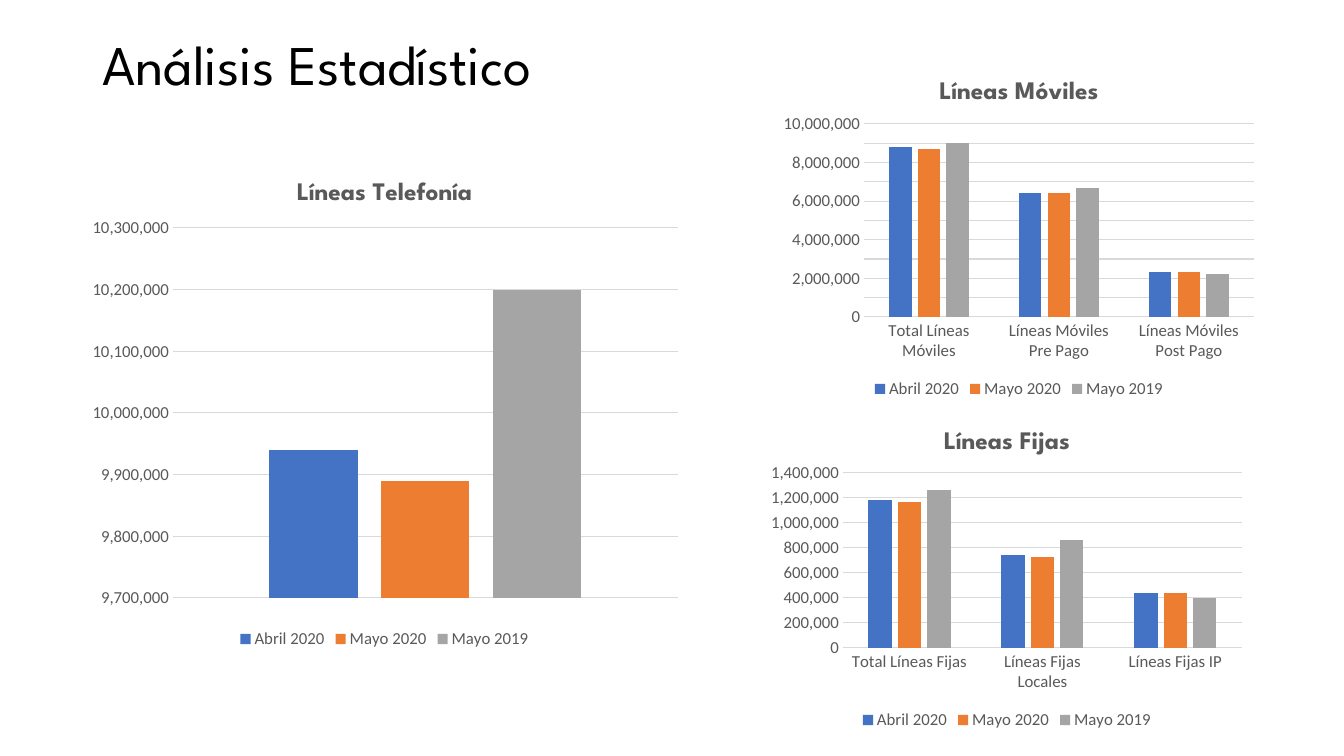
"""Build the slide of telephone line statistics with three column charts."""
from dataclasses import dataclass
from typing import Optional

from lxml.etree import SubElement
from pptx import Presentation
from pptx.chart.data import CategoryChartData
from pptx.dml.color import RGBColor
from pptx.enum.chart import XL_CHART_TYPE, XL_LEGEND_POSITION, XL_TICK_MARK
from pptx.enum.text import MSO_ANCHOR, MSO_AUTO_SIZE, PP_ALIGN
from pptx.oxml.ns import qn
from pptx.util import Emu, Pt

SCALE = 914400 / 100.8
TITLE_FONT = "League Spartan"
BODY_FONT = "Calibri"
GRAY = "595959"
GRID = "D9D9D9"
PERIODS = {"Abril 2020": "4472C4", "Mayo 2020": "ED7D31", "Mayo 2019": "A5A5A5"}


@dataclass(frozen=True)
class Box:
    left: int
    top: int
    width: int
    height: int


@dataclass(frozen=True)
class ColumnChart:
    title: str
    frame: Box
    plot: Box
    categories: list[str]
    values: list[list[int]]
    minimum: int
    maximum: int
    step: int
    show_categories: bool = True


CHARTS = [
    ColumnChart(
        "Líneas Móviles", Box(774, 62, 490, 341), Box(864, 124, 390, 193),
        ["Total Líneas Móviles", "Líneas Móviles Pre Pago", "Líneas Móviles Post Pago"],
        [[8800000, 6400000, 2300000],
         [8700000, 6400000, 2300000],
         [9000000, 6700000, 2200000]],
        0, 10000000, 1000000,
    ),
    ColumnChart(
        "Líneas Telefonía", Box(79, 160, 611, 493), Box(173, 228, 505, 370),
        ["1"], [[9940000], [9890000], [10200000]],
        9700000, 10300000, 100000, show_categories=False,
    ),
    ColumnChart(
        "Líneas Fijas", Box(762, 412, 490, 322), Box(843, 473, 399, 175),
        ["Total Líneas Fijas", "Líneas Fijas Locales", "Líneas Fijas IP"],
        [[1180000, 740000, 440000],
         [1170000, 730000, 440000],
         [1260000, 860000, 400000]],
        0, 1400000, 200000,
    ),
]


def px(length: int) -> Emu:
    return Emu(round(length * SCALE))


def color(value: str) -> RGBColor:
    return RGBColor.from_string(value)


def format_font(font, *, size: int, name: str, fill: str, bold: bool = False) -> None:
    font.size = Pt(size)
    font.name = name
    font.bold = bold
    font.color.rgb = color(fill)


def write_text(text_frame, text: str, *, line_spacing: Optional[float] = None,
               align: Optional[PP_ALIGN] = None, **font_format) -> None:
    paragraph = text_frame.paragraphs[0]
    paragraph.line_spacing = line_spacing
    paragraph.alignment = align
    run = paragraph.add_run()
    run.text = text
    format_font(run.font, **font_format)


def format_line(line, fill: str) -> None:
    line.color.rgb = color(fill)
    line.width = Pt(0.75)


def format_axes(chart, item: ColumnChart) -> None:
    category_axis, value_axis = chart.category_axis, chart.value_axis
    for axis in (category_axis, value_axis):
        axis.major_tick_mark = XL_TICK_MARK.NONE
        axis.minor_tick_mark = XL_TICK_MARK.NONE
        format_font(axis.tick_labels.font, size=12, name=BODY_FONT, fill=GRAY)
    category_axis.visible = item.show_categories
    format_line(category_axis.format.line, GRID)
    value_axis.format.line.fill.background()
    format_line(value_axis.major_gridlines.format.line, GRID)
    value_axis.minimum_scale = item.minimum
    value_axis.maximum_scale = item.maximum
    value_axis.major_unit = item.step
    value_axis.tick_labels.number_format = "#,##0"
    value_axis.tick_labels.number_format_is_linked = False


def place_plot(chart, frame: Box, plot: Box) -> None:
    plot_area = chart.element.find(".//" + qn("c:plotArea"))
    for layout in plot_area.findall(qn("c:layout")):
        plot_area.remove(layout)
    layout = SubElement(plot_area, qn("c:layout"))
    plot_area.insert(0, layout)
    manual = SubElement(layout, qn("c:manualLayout"))
    settings = {
        "layoutTarget": "inner",
        "xMode": "edge",
        "yMode": "edge",
        "x": (plot.left - frame.left) / frame.width,
        "y": (plot.top - frame.top) / frame.height,
        "w": plot.width / frame.width,
        "h": plot.height / frame.height,
    }
    for tag, value in settings.items():
        SubElement(manual, qn(f"c:{tag}")).set("val", str(value))


def add_column_chart(slide, item: ColumnChart) -> None:
    data = CategoryChartData(number_format="#,##0")
    data.categories = item.categories
    for period, values in zip(PERIODS, item.values):
        data.add_series(period, values)
    frame = item.frame
    chart = slide.shapes.add_chart(
        XL_CHART_TYPE.COLUMN_CLUSTERED, px(frame.left), px(frame.top),
        px(frame.width), px(frame.height), data,
    ).chart
    format_font(chart.font, size=10, name=BODY_FONT, fill="000000")
    chart.has_title = True
    write_text(chart.chart_title.text_frame, item.title,
               size=18, name=TITLE_FONT, fill=GRAY, bold=True)
    chart.chart_title.include_in_layout = False
    chart.has_legend = True
    chart.legend.position = XL_LEGEND_POSITION.BOTTOM
    chart.legend.include_in_layout = False
    format_font(chart.legend.font, size=12, name=BODY_FONT, fill=GRAY)
    format_axes(chart, item)
    place_plot(chart, frame, item.plot)
    plot = chart.plots[0]
    plot.vary_by_categories = False
    plot.gap_width = 219
    plot.overlap = -27
    for series, fill in zip(plot.series, PERIODS.values()):
        series.format.fill.solid()
        series.format.fill.fore_color.rgb = color(fill)


def add_title(slide, text: str) -> None:
    title = slide.shapes.title
    title.left, title.top, title.width, title.height = map(px, (92, 21, 621, 93))
    title.text_frame.auto_size = MSO_AUTO_SIZE.NONE
    title.text_frame.vertical_anchor = MSO_ANCHOR.MIDDLE
    write_text(title.text_frame, text, line_spacing=0.9, align=PP_ALIGN.LEFT,
               size=40, name=TITLE_FONT, fill="000000")


def main() -> None:
    presentation = Presentation()
    presentation.slide_width, presentation.slide_height = px(1344), px(756)
    slide = presentation.slides.add_slide(presentation.slide_layouts[5])
    add_title(slide, "Análisis Estadístico")
    for item in CHARTS:
        add_column_chart(slide, item)
    presentation.save("out.pptx")


if __name__ == "__main__":
    main()
